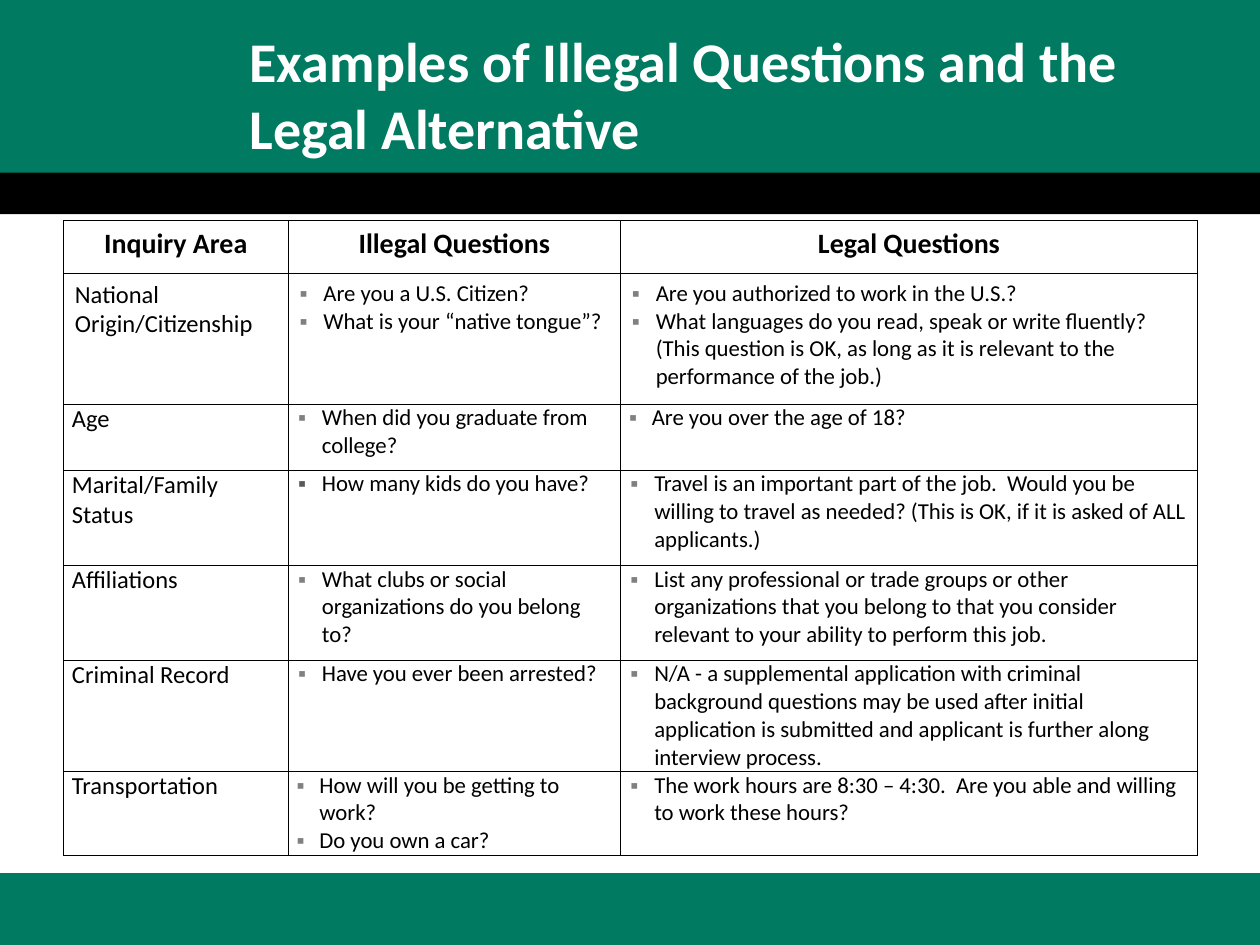
from lxml.etree import SubElement
from pptx import Presentation
from pptx.dml.color import RGBColor
from pptx.enum.shapes import MSO_SHAPE
from pptx.enum.text import MSO_ANCHOR, MSO_AUTO_SIZE, PP_ALIGN
from pptx.oxml.ns import qn
from pptx.util import Cm, Pt

COLORS = {
    "green": "007A60",
    "black": "000000",
    "white": "FFFFFF",
    "bullet": "808080",
    "dark_bullet": "595959",
}
FONT = "Calibri"
TITLE = "Examples of Illegal Questions and the Legal Alternative"

# left, top, width, height in cm
BANDS = [
    (0, 0, 25.4, 4.09, "green"),
    (0, 17.6, 25.4, 1.47, "green"),
    (0, 3.48, 25.4, 0.84, "black"),
]

HEADINGS = ["Inquiry Area", "Illegal Questions", "Legal Questions"]
COLUMN_WIDTHS = [4.53, 6.7, 11.63]
ROW_HEIGHTS = [1.07, 2.64, 1.33, 1.92, 1.91, 2.24, 1.68]

# inquiry area, illegal questions, legal questions
INQUIRIES = [
    ("National Origin/Citizenship",
     ["Are you a U.S. Citizen?", "What is your “native tongue”?"],
     ["Are you authorized to work in the U.S.?",
      "What languages do you read, speak or write fluently? (This question "
      "is OK, as long as it is relevant to the performance of the job.)"]),
    ("Age",
     ["When did you graduate from college?"],
     ["Are you over the age of 18?"]),
    ("Marital/Family Status",
     ["How many kids do you have?"],
     ["Travel is an important part of the job.  Would you be willing to "
      "travel as needed? (This is OK, if it is asked of ALL applicants.)"]),
    ("Affiliations",
     ["What clubs or social organizations do you belong to?"],
     ["List any professional or trade groups or other organizations that you "
      "belong to that you consider relevant to your ability to perform this job."]),
    ("Criminal Record",
     ["Have you ever been arrested?"],
     ["N/A - a supplemental application with criminal background questions "
      "may be used after initial application is submitted and applicant is "
      "further along interview process."]),
    ("Transportation",
     ["How will you be getting to work?", "Do you own a car?"],
     ["The work hours are 8:30 – 4:30.  Are you able and willing to work "
      "these hours?"]),
]

# Exceptions by (row, column): left margin in cm, bullet colour
DEFAULT_MARGIN = 0.51
MARGINS = {(1, 1): 0.48, (1, 2): 0.48, (2, 2): 0.46, (6, 1): 0.46}
BULLET_COLORS = {(3, 1): "dark_bullet"}


def rgb(name):
    return RGBColor.from_string(COLORS[name])


def style(paragraph, size, color="black", bold=False, align=PP_ALIGN.LEFT):
    paragraph.alignment = align
    font = paragraph.font
    font.name, font.size, font.bold = FONT, Pt(size), bold
    font.color.rgb = rgb(color)


def add_band(slide, left, top, width, height, color):
    band = slide.shapes.add_shape(
        MSO_SHAPE.RECTANGLE, Cm(left), Cm(top), Cm(width), Cm(height))
    band.shadow.inherit = False
    band.fill.solid()
    band.fill.fore_color.rgb = rgb(color)
    band.line.fill.background()


def set_title(slide):
    title = slide.shapes.title
    title.left, title.top = Cm(4.78), Cm(0.3)
    title.width, title.height = Cm(19.25), Cm(3.18)
    frame = title.text_frame
    frame.text = TITLE
    frame.word_wrap = True
    frame.auto_size = MSO_AUTO_SIZE.NONE
    frame.vertical_anchor = MSO_ANCHOR.MIDDLE
    style(frame.paragraphs[0], 32, "white", bold=True)
    # Bring the title in front of the bands
    title.element.getparent().append(title.element)


def add_bullet(paragraph, margin, color):
    props = paragraph._p.get_or_add_pPr()
    props.set("marL", str(Cm(margin)))
    props.set("indent", str(-Cm(min(margin, 0.48))))
    bullet_color = SubElement(props, qn("a:buClr"))
    SubElement(bullet_color, qn("a:srgbClr"), val=COLORS[color])
    SubElement(props, qn("a:buFont"), typeface="Arial")
    SubElement(props, qn("a:buChar"), char="▪")


def add_borders(cell):
    props = cell._tc.get_or_add_tcPr()
    for index, side in enumerate(("a:lnL", "a:lnR", "a:lnT", "a:lnB")):
        border = props.makeelement(qn(side), {"w": str(Pt(0.25))})
        fill = SubElement(border, qn("a:solidFill"))
        SubElement(fill, qn("a:srgbClr"), val=COLORS["black"])
        props.insert(index, border)


def format_cell(cell, row):
    side, edge = (0.23, 0.13) if row < 2 else (0.17, 0)
    cell.margin_left = cell.margin_right = Cm(side)
    cell.margin_top = cell.margin_bottom = Cm(edge)
    cell.vertical_anchor = MSO_ANCHOR.TOP
    cell.fill.solid()
    cell.fill.fore_color.rgb = rgb("white")
    add_borders(cell)


def fill_questions(cell, questions, position):
    cell.text = "\n".join(questions)
    for paragraph in cell.text_frame.paragraphs:
        add_bullet(paragraph, MARGINS.get(position, DEFAULT_MARGIN),
                   BULLET_COLORS.get(position, "bullet"))
        style(paragraph, 13)


def add_inquiry_table(slide):
    table = slide.shapes.add_table(
        len(ROW_HEIGHTS), len(COLUMN_WIDTHS), Cm(1.28), Cm(4.44),
        Cm(sum(COLUMN_WIDTHS)), Cm(sum(ROW_HEIGHTS))).table
    table.first_row = table.horz_banding = False
    for column, width in zip(table.columns, COLUMN_WIDTHS):
        column.width = Cm(width)
    for row, height in zip(table.rows, ROW_HEIGHTS):
        row.height = Cm(height)

    # Heading row
    for column, heading in enumerate(HEADINGS):
        cell = table.cell(0, column)
        format_cell(cell, 0)
        cell.text = heading
        style(cell.text_frame.paragraphs[0], 16, bold=True,
              align=PP_ALIGN.CENTER)

    # One row per inquiry area
    for row, (area, *question_lists) in enumerate(INQUIRIES, start=1):
        area_cell = table.cell(row, 0)
        format_cell(area_cell, row)
        area_cell.text = area
        style(area_cell.text_frame.paragraphs[0], 14)
        for column, questions in enumerate(question_lists, start=1):
            cell = table.cell(row, column)
            format_cell(cell, row)
            fill_questions(cell, questions, (row, column))


def main():
    deck = Presentation()
    deck.slide_width, deck.slide_height = Cm(25.4), Cm(19.05)
    slide = deck.slides.add_slide(deck.slide_layouts[5])
    for band in BANDS:
        add_band(slide, *band)
    add_inquiry_table(slide)
    set_title(slide)
    deck.save("out.pptx")


if __name__ == "__main__":
    main()
